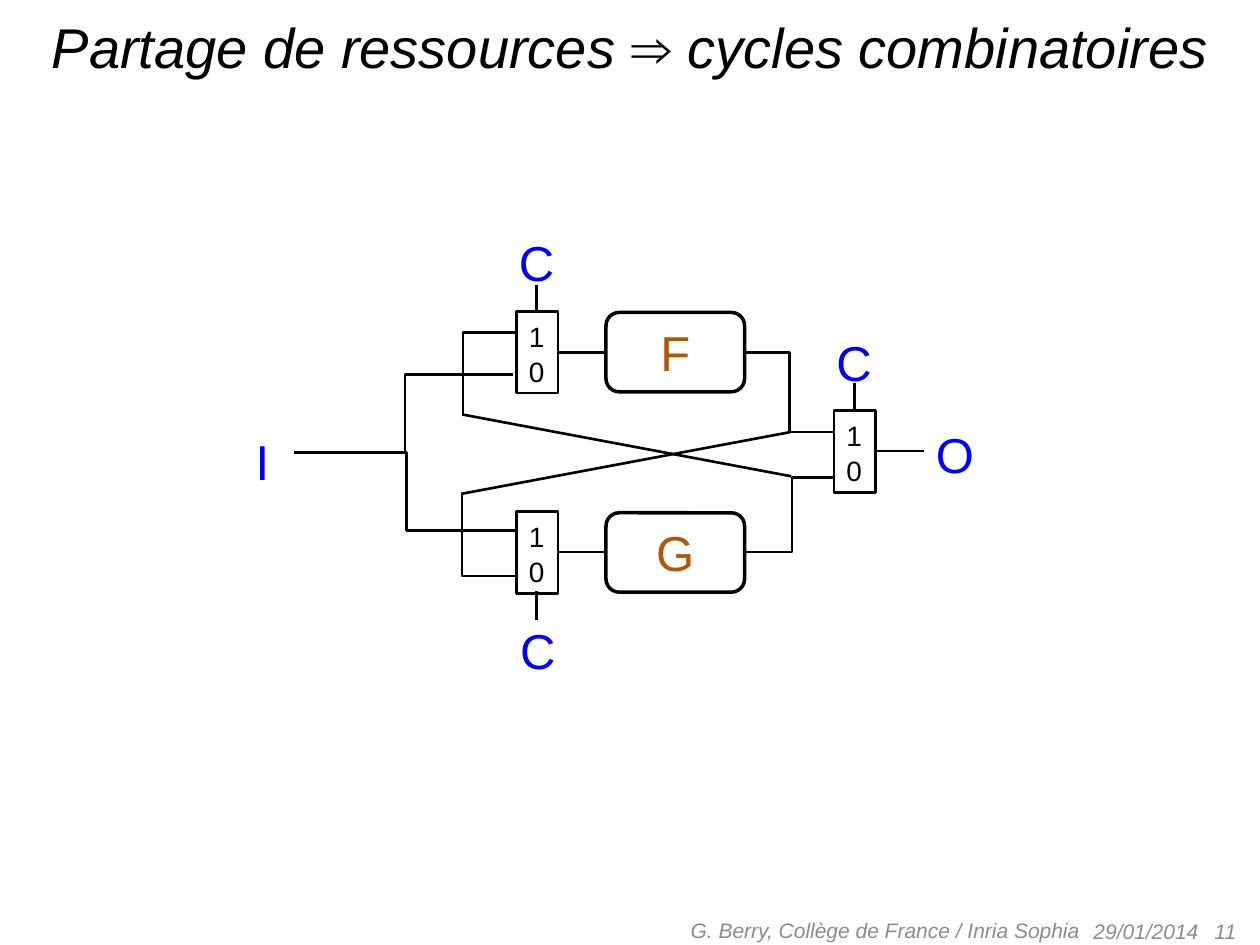
from lxml import etree
from pptx import Presentation
from pptx.dml.color import RGBColor
from pptx.enum.shapes import MSO_CONNECTOR, MSO_SHAPE
from pptx.enum.text import MSO_ANCHOR, PP_ALIGN
from pptx.oxml.ns import qn
from pptx.util import Inches, Pt

LEFT, CENTER, RIGHT = PP_ALIGN.LEFT, PP_ALIGN.CENTER, PP_ALIGN.RIGHT
TOP, MIDDLE = MSO_ANCHOR.TOP, MSO_ANCHOR.MIDDLE
STRAIGHT, ELBOW = MSO_CONNECTOR.STRAIGHT, MSO_CONNECTOR.ELBOW
RECT, ROUNDED = MSO_SHAPE.RECTANGLE, MSO_SHAPE.ROUNDED_RECTANGLE
BLACK, WHITE, BLUE, BROWN, GREY = "000000", "FFFFFF", "0000FF", "B45600", "8C8C8C"


def color(value):
    return RGBColor.from_string(value)


def write(shape, paragraphs, size, ink=BLACK, align=LEFT, anchor=TOP,
          wrap=True, italic=False, before=0, spacing=1.0):
    """Fill a shape with paragraphs, each a list of (text, upright) spans."""
    frame = shape.text_frame
    frame.word_wrap = wrap
    frame.vertical_anchor = anchor
    for index, spans in enumerate(paragraphs):
        para = frame.add_paragraph() if index else frame.paragraphs[0]
        para.alignment = align
        para.space_before = Pt(before)
        para.line_spacing = spacing
        for text, upright in spans:
            span = para.add_run()
            span.text = text
            span.font.name = "Arial"
            span.font.size = Pt(size)
            span.font.italic = italic and not upright
            span.font.color.rgb = color(ink)


class Circuit:
    """Draws the elements of a circuit on one page."""

    def __init__(self, page, font_size=28, wire_width=1.5):
        self.page = page
        self.font_size = font_size
        self.wire_width = wire_width

    def text(self, place, paragraphs, size, **style):
        box = self.page.shapes.add_textbox(*map(Inches, place))
        write(box, paragraphs, size, **style)

    def box(self, kind, place, width):
        shape = self.page.shapes.add_shape(kind, *map(Inches, place))
        shape.shadow.inherit = False
        shape.fill.solid()
        shape.fill.fore_color.rgb = color(WHITE)
        shape.line.color.rgb = color(BLACK)
        shape.line.width = Pt(width)
        return shape

    def signal(self, name, left, top, width=0.49):
        self.text((left, top, width, 0.56), [[(name, False)]], self.font_size,
                  ink=BLUE, wrap=False, before=6, spacing=1.05)

    def block(self, name, top):
        shape = self.box(ROUNDED, (4.81, top, 1.1, 0.63), 2)
        write(shape, [[(name, False)]], self.font_size, ink=BROWN,
              align=CENTER, before=5.6)

    def multiplexer(self, left, top):
        shape = self.box(RECT, (left, top, 0.33, 0.65), self.wire_width)
        write(shape, [[("1", False)], [("0", False)]], 16, wrap=False,
              spacing=1.05)

    def wire(self, start, end, kind=STRAIGHT, rotation=0, bend=None):
        """Join two points; rotation in degrees, bend as a share of the width."""
        line = self.page.shapes.add_connector(kind, *map(Inches, start + end))
        line.line.color.rgb = color(BLACK)
        line.line.width = Pt(self.wire_width)
        properties = line._element.spPr
        etree.SubElement(properties, qn("a:effectLst"))
        if rotation:
            properties.find(qn("a:xfrm")).set("rot", str(rotation * 60000))
        if bend is not None:
            guides = properties.find(qn("a:prstGeom")).find(qn("a:avLst"))
            etree.SubElement(guides, qn("a:gd"), name="adj1",
                             fmla=f"val {round(bend * 100000)}")


def main():
    deck = Presentation()
    deck.slide_width, deck.slide_height = Inches(10), Inches(7.5)
    page = deck.slides.add_slide(deck.slide_layouts[6])
    circuit = Circuit(page)

    title = [("Partage de ressources ", False), ("⇒ ", True),
             ("cycles combinatoires", False)]
    circuit.text((0, 0.05, 10, 0.64), [title], 32, align=CENTER, italic=True)

    circuit.block("F", 2.48)
    circuit.block("G", 4.07)

    for name, left, top, width in [("C", 4.02, 1.77, 0.49), ("C", 4.03, 4.85, 0.49),
                                   ("C", 6.54, 2.57, 0.49), ("I", 1.93, 3.35, 0.31),
                                   ("O", 7.33, 3.3, 0.51)]:
        circuit.signal(name, left, top, width)

    # Block outputs, then the shared input
    for start, end in [((5.91, 2.8), (6.62, 3.43)), ((5.91, 4.38), (6.66, 3.79)),
                       ((4.07, 2.97), (2.36, 3.59)), ((4.12, 4.21), (2.33, 3.59))]:
        circuit.wire(start, end, ELBOW)

    for left, top in [(4.1, 2.47), (4.1, 4.06), (6.62, 3.26)]:
        circuit.multiplexer(left, top)

    # Selectors, multiplexer outputs and crossed feedback
    for start, end in [((4.26, 2.26), (4.26, 2.47)), ((4.26, 4.69), (4.26, 4.92)),
                       ((6.78, 3.04), (6.78, 3.25)), ((4.43, 2.8), (4.81, 2.8)),
                       ((4.43, 4.38), (4.81, 4.38)), ((6.95, 3.58), (7.33, 3.58)),
                       ((3.66, 3.92), (6.27, 3.43)), ((3.67, 3.29), (6.28, 3.78))]:
        circuit.wire(start, end)

    # Feedback into the multiplexers, given before rotation
    circuit.wire((4.2, 4.03), (3.55, 4.45), ELBOW, rotation=270, bend=1.01)
    circuit.wire((4.21, 3.18), (3.56, 2.76), ELBOW, rotation=90, bend=1.01)

    for text, left, top, width, align in [
            ("29/01/2014", 8.58, 7.19, 1.42, LEFT),
            ("11", 7.58, 7.19, 2.33, RIGHT),
            ("G. Berry, Collège de France / Inria Sophia", 5.08, 7.18, 3.59, RIGHT)]:
        circuit.text((left, top, width, 0.4), [[(text, False)]], 12, ink=GREY,
                     align=align, anchor=MIDDLE, italic=True)

    deck.save("out.pptx")


if __name__ == "__main__":
    main()
